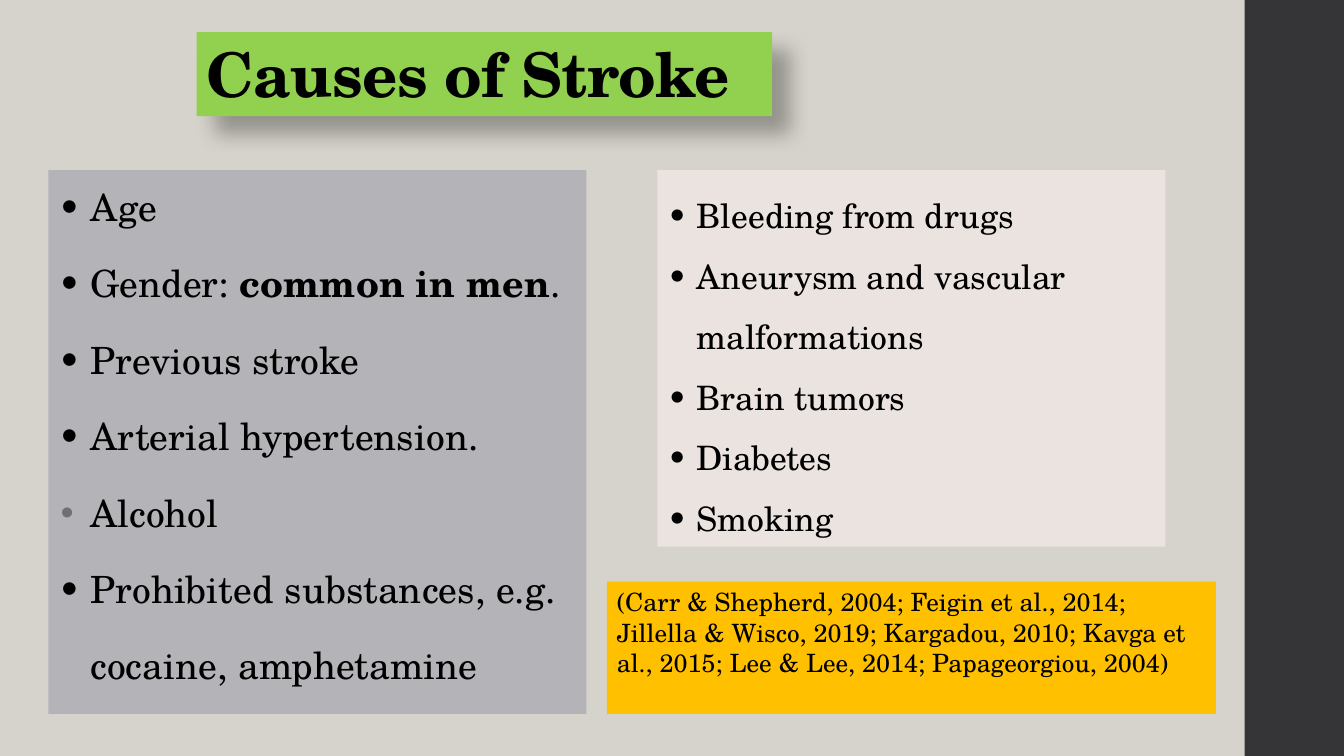
from dataclasses import dataclass

from lxml import etree
from pptx import Presentation
from pptx.dml.color import RGBColor
from pptx.enum.shapes import MSO_SHAPE
from pptx.enum.text import MSO_ANCHOR
from pptx.oxml.ns import qn
from pptx.util import Pt

RECT = MSO_SHAPE.RECTANGLE
TOP, BOTTOM = MSO_ANCHOR.TOP, MSO_ANCHOR.BOTTOM


@dataclass(frozen=True)
class Theme:
    """Colours, font and type sizes of the slide."""
    font: str = "TeX Gyre Schola"
    text: str = "000000"
    bg: str = "D6D3CC"
    sidebar: str = "353537"
    title: str = "92D050"
    risks: str = "B4B4B8"
    others: str = "EBE3E0"
    sources: str = "FFC000"
    pale_bullet: str = "6F6F74"
    title_size: float = 44
    risks_size: float = 26.8
    others_size: float = 24
    sources_size: float = 18


THEME = Theme()
RISKS = [
    ["Age"],
    ["Gender: ", "common in men", "."],
    ["Previous stroke"],
    ["Arterial hypertension."],
    ["Alcohol"],
    ["Prohibited substances, e.g."],
    ["cocaine, amphetamine"],
]
PALE_RISK, UNMARKED_RISK = 4, 6
OTHERS = ["Bleeding from drugs", "Aneurysm and vascular malformations",
          "Brain tumors", "Diabetes", "Smoking"]
SOURCES = ("(Carr & Shepherd, 2004; Feigin et al., 2014; Jillella & Wisco, 2019; "
           "Kargadou, 2010; Kavga et al., 2015; Lee & Lee, 2014; Papageorgiou, 2004)")


def add_panel(slide, box, color, anchor=TOP):
    """Add a filled text box and return it."""
    sp = slide.shapes.add_textbox(*map(Pt, box))
    sp.fill.solid()
    sp.fill.fore_color.rgb = RGBColor.from_string(color)
    sp.text_frame.word_wrap = True
    sp.text_frame.vertical_anchor = anchor
    return sp


def add_run(p, text, size, bold=False):
    """Append a run in the theme font and return it."""
    r = p.add_run()
    r.text = text
    r.font.name = THEME.font
    r.font.size = Pt(size)
    r.font.bold = bold
    r.font.color.rgb = RGBColor.from_string(THEME.text)
    return r


def add_paragraph(tf, first, spacing, before=0, after=0):
    """Return the next paragraph with its spacing set."""
    p = tf.paragraphs[0] if first else tf.add_paragraph()
    p.line_spacing = spacing
    p.space_before, p.space_after = Pt(before), Pt(after)
    return p


def set_bullet(p, indent, color, percent=100):
    """Give a paragraph a hanging round bullet."""
    pPr = p._p.get_or_add_pPr()
    pPr.set("marL", str(Pt(indent)))
    pPr.set("indent", str(-Pt(indent)))
    clr = etree.SubElement(pPr, qn("a:buClr"))
    etree.SubElement(clr, qn("a:srgbClr"), val=color)
    etree.SubElement(pPr, qn("a:buSzPct"), val=str(percent * 1000))
    etree.SubElement(pPr, qn("a:buFont"), typeface=THEME.font)
    etree.SubElement(pPr, qn("a:buChar"), char="•")


def add_shadow(sp, blur, dist, angle, opacity):
    """Add an outer shadow to a shape."""
    effects = etree.SubElement(sp._element.spPr, qn("a:effectLst"))
    shadow = etree.SubElement(
        effects, qn("a:outerShdw"), blurRad=str(Pt(blur)), dist=str(Pt(dist)),
        dir=str(angle * 60000), algn="tl", rotWithShape="0")
    clr = etree.SubElement(shadow, qn("a:srgbClr"), val=THEME.text)
    etree.SubElement(clr, qn("a:alpha"), val=str(opacity * 1000))


def add_sidebar(slide, box):
    """Add the dark band at the right edge."""
    sp = slide.shapes.add_shape(RECT, *map(Pt, box))
    sp.fill.solid()
    sp.fill.fore_color.rgb = RGBColor.from_string(THEME.sidebar)
    sp.line.fill.background()
    sp.shadow.inherit = False


def add_title(slide, box):
    """Add the shadowed title."""
    sp = add_panel(slide, box, THEME.title, BOTTOM)
    add_shadow(sp, blur=15, dist=18, angle=45, opacity=30)
    p = add_paragraph(sp.text_frame, True, 0.9)
    r = add_run(p, "Causes of Stroke", THEME.title_size, bold=True)
    r.font._element.set("spc", "-50")


def add_risks(slide, box, indent=23):
    """Add the left list of causes."""
    tf = add_panel(slide, box, THEME.risks).text_frame
    for i, parts in enumerate(RISKS):
        p = add_paragraph(tf, i == 0, 1.2, before=14, after=2)
        for j, text in enumerate(parts):
            r = add_run(p, text, THEME.risks_size, bold=j == 1)
            r.font._element.set("spc", "10")
        if i == UNMARKED_RISK:
            p._p.get_or_add_pPr().set("marL", str(Pt(indent)))
        elif i == PALE_RISK:
            set_bullet(p, indent, THEME.pale_bullet, 80)
        else:
            set_bullet(p, indent, THEME.text)


def add_others(slide, box, indent=21):
    """Add the right list of causes."""
    tf = add_panel(slide, box, THEME.others).text_frame
    for i, text in enumerate(OTHERS):
        p = add_paragraph(tf, i == 0, 1.5)
        add_run(p, text, THEME.others_size)
        set_bullet(p, indent, THEME.text)


def add_sources(slide, box):
    """Add the box of citations."""
    tf = add_panel(slide, box, THEME.sources).text_frame
    add_run(add_paragraph(tf, True, 1.0), SOURCES, THEME.sources_size)


def main():
    """Build the slide and save it."""
    prs = Presentation()
    prs.slide_width, prs.slide_height = Pt(960), Pt(540)
    slide = prs.slides.add_slide(prs.slide_layouts[6])
    slide.background.fill.solid()
    slide.background.fill.fore_color.rgb = RGBColor.from_string(THEME.bg)
    add_sidebar(slide, (889, 0, 71, 540))
    add_title(slide, (140.5, 23, 411, 60))
    add_risks(slide, (34.5, 121.5, 384.5, 388.5))
    add_others(slide, (469.5, 121.5, 363, 269))
    add_sources(slide, (433.5, 415.5, 435, 94.5))
    prs.save("out.pptx")


if __name__ == "__main__":
    main()
